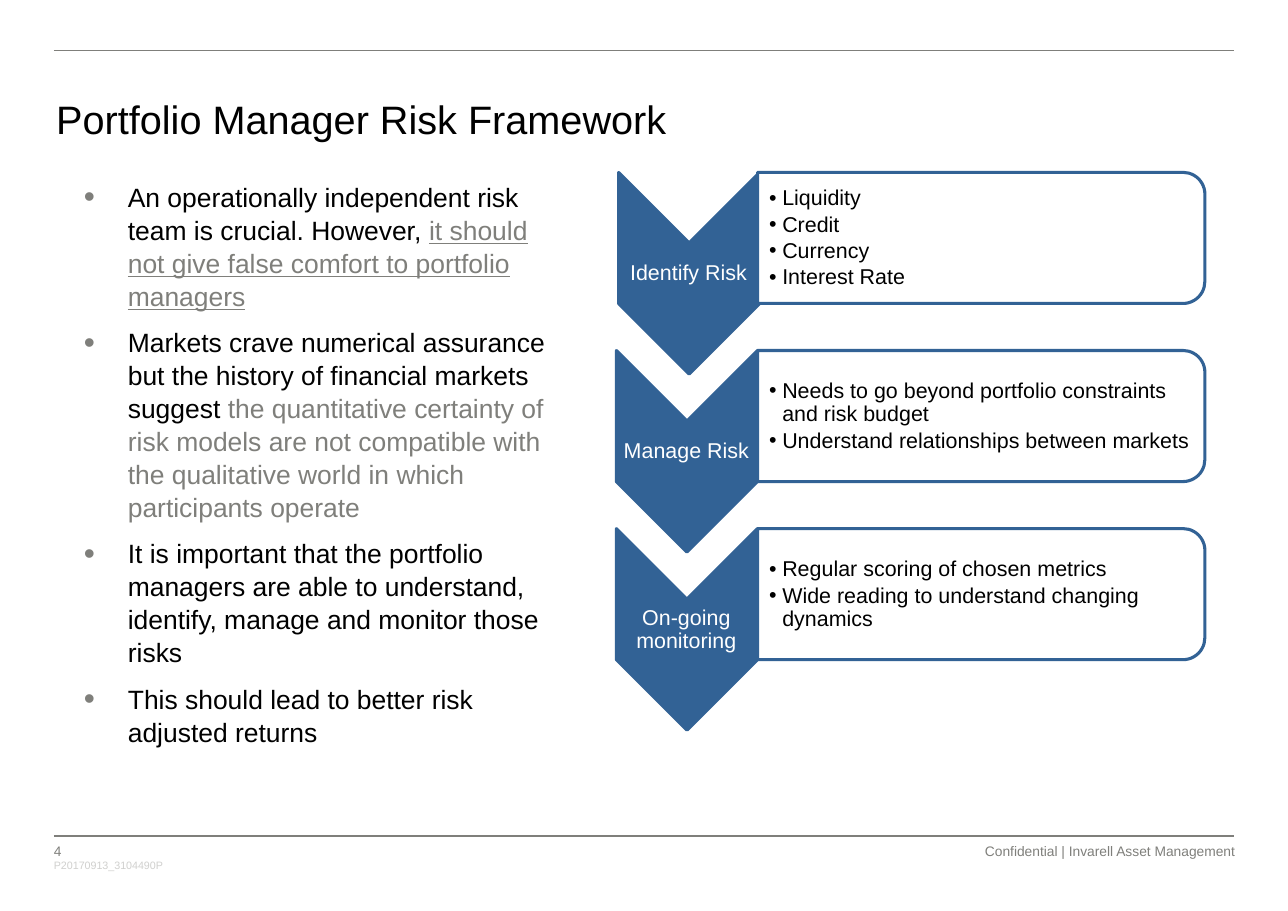
from lxml.etree import SubElement as Sub
from pptx import Presentation
from pptx.dml.color import RGBColor
from pptx.enum.shapes import MSO_CONNECTOR as Link, MSO_SHAPE as Kind
from pptx.enum.text import MSO_ANCHOR as Anchor, MSO_AUTO_SIZE as Fit, PP_ALIGN as Align
from pptx.oxml.ns import qn
from pptx.util import Inches, Pt

hue = RGBColor.from_string
BLUE, GREY, PALE, BLACK, WHITE = "326295", "7F7F7B", "D0D0CE", "000000", "FFFFFF"

deck = Presentation()
deck.slide_width, deck.slide_height = Inches(11.69), Inches(8.27)
slide = deck.slides.add_slide(deck.slide_layouts[1])
shapes = slide.shapes


def area(x, y, w, h):
    wide, high = deck.slide_width / 100, deck.slide_height / 100
    return [round(n) for n in (x * wide, y * high, w * wide, h * high)]


def write(frame, rows, size, tone, pads=(0, 0, 0, 0), anchor=Anchor.TOP,
          para={}, bullet=None):
    sides = ("margin_left", "margin_top", "margin_right", "margin_bottom")
    look = dict(zip(sides, map(Inches, pads)))
    look.update(word_wrap=True, auto_size=Fit.NONE, vertical_anchor=anchor)
    for key, value in look.items():
        setattr(frame, key, value)
    for i, row in enumerate(rows):
        line = frame.add_paragraph() if i else frame.paragraphs[0]
        for key, value in {"alignment": Align.LEFT, "space_before": Pt(0), **para}.items():
            setattr(line, key, value)
        for words, shade, under in row:
            run = line.add_run()
            run.text = words
            run.font.color.rgb = hue(shade or tone)
            for key, value in {"name": "Arial", "size": Pt(size), "underline": under}.items():
                setattr(run.font, key, value)
        if bullet:
            indent, shade, scale = bullet
            props = line._p.get_or_add_pPr()
            props.set("marL", str(Inches(indent)))
            props.set("indent", str(-Inches(indent)))
            Sub(Sub(props, qn("a:buClr")), qn("a:srgbClr"), val=shade)
            Sub(props, qn("a:buSzPct"), val=str(scale * 1000))
            Sub(props, qn("a:buFont"), typeface="Arial")
            Sub(props, qn("a:buChar"), char="•")


for y, thick in ((5.56, 1), (91.78, 1)):
    x, top, w, _ = area(4.19, y, 91.62, 0)
    rule = shapes.add_connector(Link.STRAIGHT, x, top, x + w, top)
    rule.line.color.rgb = hue(GREY)
    rule.line.width = Pt(thick)
    Sub(rule._element.spPr, qn("a:effectLst"))

notes = (
    ("4", (4.19, 92.5, 1.28, 1.81), 9, GREY, Align.LEFT),
    ("P20170913_3104490P", (4.19, 94.32, 13.52, 2.3), 7, PALE, Align.LEFT),
    ("Confidential | Invarell Asset Management", (66.55, 92.5, 29.34, 1.81), 9, GREY, Align.RIGHT),
)
for words, spot, size, tone, side in notes:
    note = shapes.add_textbox(*area(*spot))
    write(note.text_frame, [[(words, None, False)]], size, tone, para={"alignment": side})

title, body = shapes.title, slide.placeholders[1]
holders = ((title, (3.51, 9.79, 93.07, 5.32)), (body, (5.65, 19.11, 38.58, 64.81)))
for holder, spot in holders:
    for key, value in zip(("left", "top", "width", "height"), area(*spot)):
        setattr(holder, key, value)

pads = (0.1, 0.05, 0.1, 0.05)
write(title.text_frame, [[("Portfolio Manager Risk Framework", None, False)]], 25.9, BLACK, pads)
points = [
    [("An operationally independent risk team is crucial. However, ", None, False),
     ("it should not give false comfort to portfolio managers", GREY, True)],
    [("Markets crave numerical assurance but the history of financial markets suggest ", None, False),
     ("the quantitative certainty of risk models are not compatible with the "
      "qualitative world in which participants operate", GREY, False)],
    [("It is important that the portfolio managers are able to understand, "
      "identify, manage and monitor those risks", None, False)],
    [("This should lead to better risk adjusted returns", None, False)],
]
write(body.text_frame, points, 17.3, BLACK, pads,
      para={"line_spacing": 1.04, "space_after": Pt(8.7)}, bullet=(0.4, GREY, 120))

steps = (
    ("Identify Risk", 0.17, ("Liquidity", "Credit", "Currency", "Interest Rate")),
    ("Manage Risk", 0, ("Needs to go beyond portfolio constraints and risk budget",
                        "Understand relationships between markets")),
    ("On-going monitoring", 0, ("Regular scoring of chosen metrics",
                                "Wide reading to understand changing dynamics")),
)
for i, (name, shift, items) in enumerate(steps):
    drop = i * 19.55
    forms = (
        (Kind.CHEVRON, (45.51 + shift, 22.25 + drop, 15.65, 15.48), BLUE),
        (Kind.ROUND_2_SAME_RECTANGLE, (71.09, 1.57 + drop, 10.18, 49.09), WHITE),
    )
    for kind, spot, tone in forms:
        form = shapes.add_shape(kind, *area(*spot))
        form.rotation = 90
        form.shadow.inherit = False
        form.fill.solid()
        form.fill.fore_color.rgb = hue(tone)
        form.line.color.rgb = hue(BLUE)
        form.line.width = Pt(2)
    label = shapes.add_textbox(*area(47.82 + shift, 26.72 + drop, 10.95, 6.65))
    write(label.text_frame, [[(name, None, False)]], 14, WHITE, (0.01,) * 4, Anchor.MIDDLE,
          {"alignment": Align.CENTER, "line_spacing": 0.9})
    panel = shapes.add_textbox(*area(58.77, 19.71 + drop, 34.3, 12.94))
    write(panel.text_frame, [[(item, None, False)] for item in items], 14, BLACK,
          (0.11, 0.01, 0.01, 0.01), Anchor.MIDDLE,
          {"line_spacing": 0.9, "space_after": Pt(2.1)}, (0.12, BLACK, 100))

deck.save("out.pptx")
